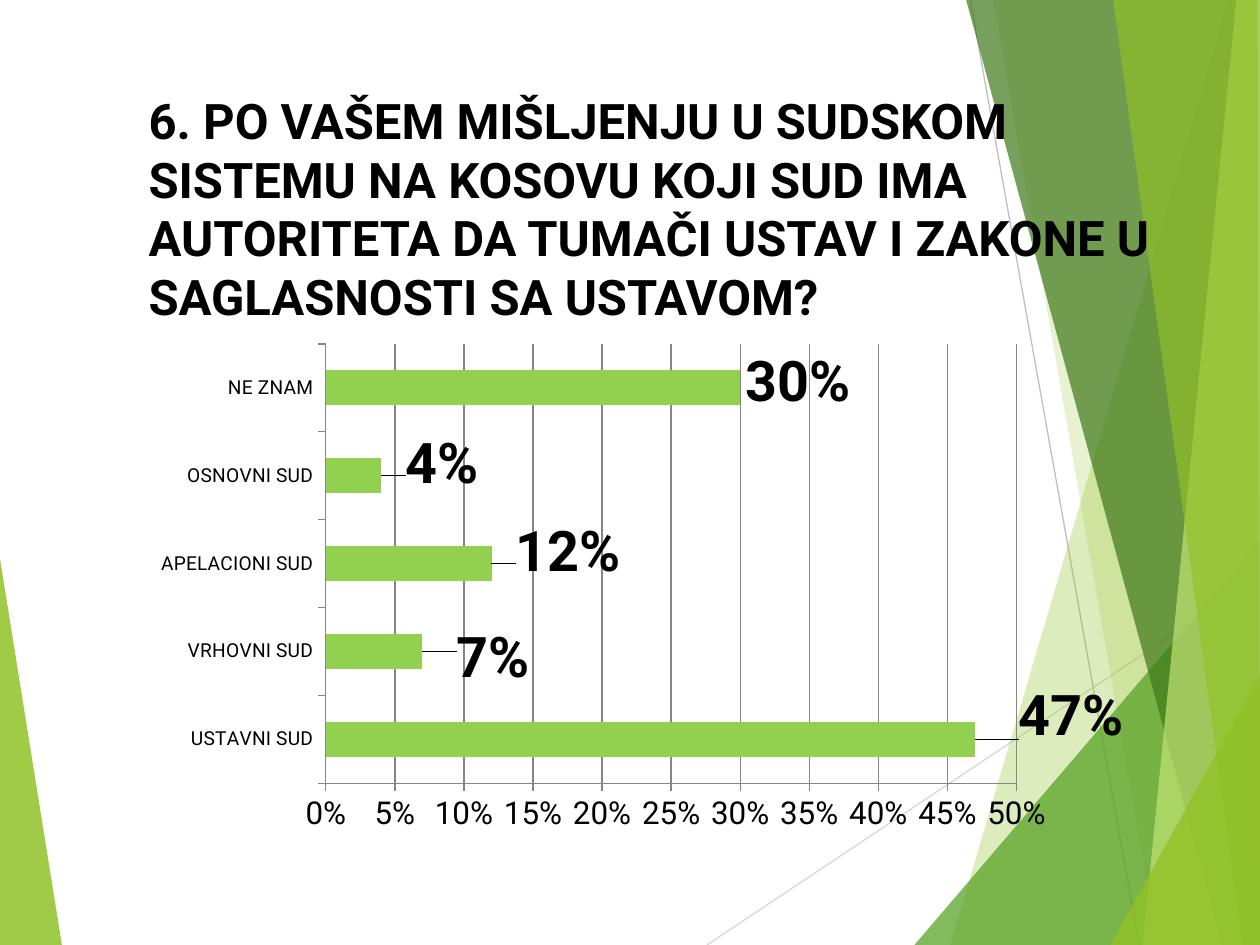
from dataclasses import dataclass

import lxml.etree
import pptx
import pptx.chart.data
import pptx.dml.color
import pptx.enum.chart
import pptx.enum.shapes
import pptx.enum.text
import pptx.oxml
import pptx.oxml.ns
import pptx.util

Pt = pptx.util.Pt
qn = pptx.oxml.ns.qn


@dataclass(frozen=True)
class Theme:
    font: str = "Roboto"
    text: str = "000000"
    lime: str = "90C226"
    green: str = "54A021"
    forest: str = "3F7819"
    pale: str = "C0E474"
    bar: str = "92D050"
    grid: str = "868686"
    title_size: float = 28
    axis_size: float = 18
    category_size: float = 11
    value_size: float = 32
    line_width: float = 0.75


@dataclass(frozen=True)
class Facet:
    corners: tuple[tuple[float, float], ...]
    color: str
    opacity: int


@dataclass(frozen=True)
class Ray:
    start: tuple[float, float]
    end: tuple[float, float]
    color: str


@dataclass(frozen=True)
class Answer:
    court: str
    share: float
    label_dx: float
    label_dy: float


THEME = Theme()

LEFT_FACET = Facet(((-0.5, 316), (35.5, 540.5), (-0.5, 540)), THEME.lime, 85)
RAYS = (
    Ray((404, 540), (720.5, 329), "D9D9D9"),
    Ray((554.5, 0), (651, 540), "BFBFBF"),
)
RIGHT_FACETS = (
    Facet(((702, 0), (543, 540), (721.5, 540.5), (721, 0.5)), THEME.lime, 30),
    Facet(((567.5, -0.5), (661.5, 540), (720.5, 540), (720.5, -0.5)), THEME.lime, 20),
    Facet(((522.5, 540), (720, 309), (720.5, 540)), THEME.green, 72),
    Facet(((552, -0.5), (698.5, 540), (720.5, 540), (720.5, -0.5)), THEME.forest, 70),
    Facet(((706.5, -0.5), (653, 540), (720.5, 540), (720, -0.5)), THEME.pale, 70),
    Facet(((636, -0.5), (710, 540), (720, 540), (718.5, -0.5)), THEME.lime, 65),
    Facet(((634.5, 540), (720.5, 385), (720.5, 540)), THEME.lime, 80),
)
QUESTION = (
    "6. PO VAŠEM MIŠLJENJU U SUDSKOM SISTEMU NA KOSOVU KOJI SUD IMA "
    "AUTORITETA DA TUMAČI USTAV I ZAKONE U SAGLASNOSTI SA USTAVOM?"
)
ANSWERS = (
    Answer("USTAVNI SUD", 0.47, 0.04, -0.04),
    Answer("VRHOVNI SUD", 0.07, 0.03, 0.01),
    Answer("APELACIONI SUD", 0.12, 0.02, -0.02),
    Answer("OSNOVNI SUD", 0.04, 0.02, -0.02),
    Answer("NE ZNAM", 0.3, 0, -0.01),
)


def rgb(color: str) -> pptx.dml.color.RGBColor:
    return pptx.dml.color.RGBColor.from_string(color)


def style_font(font, size: float, bold: bool = False) -> None:
    font.name = THEME.font
    font.size = Pt(size)
    font.bold = bold
    font.color.rgb = rgb(THEME.text)


def style_line(line, color: str) -> None:
    line.color.rgb = rgb(color)
    line.width = Pt(THEME.line_width)


def draw_facet(slide, facet: Facet) -> None:
    first, *others = [(Pt(x), Pt(y)) for x, y in facet.corners]
    builder = slide.shapes.build_freeform(*first)
    builder.add_line_segments(others, close=True)
    shape = builder.convert_to_shape()
    shape.shadow.inherit = False
    shape.fill.solid()
    shape.fill.fore_color.rgb = rgb(facet.color)
    shape.line.fill.background()
    color = shape.element.spPr.find(qn("a:solidFill")).find(qn("a:srgbClr"))
    lxml.etree.SubElement(color, qn("a:alpha"), val=str(facet.opacity * 1000))


def draw_ray(slide, ray: Ray) -> None:
    connector = slide.shapes.add_connector(
        pptx.enum.shapes.MSO_CONNECTOR.STRAIGHT,
        *(Pt(value) for value in ray.start + ray.end),
    )
    style_line(connector.line, ray.color)
    lxml.etree.SubElement(connector.element.spPr, qn("a:effectLst"))


def write_question(slide) -> None:
    question = slide.shapes.title
    question.left, question.top = Pt(77.75), Pt(48)
    question.width, question.height = Pt(612), Pt(143.5)
    frame = question.text_frame
    frame.text = QUESTION
    frame.word_wrap = True
    frame.auto_size = pptx.enum.text.MSO_AUTO_SIZE.NONE
    frame.vertical_anchor = pptx.enum.text.MSO_ANCHOR.TOP
    paragraph = frame.paragraphs[0]
    paragraph.alignment = pptx.enum.text.PP_ALIGN.LEFT
    style_font(paragraph.font, THEME.title_size, bold=True)
    question.element.getparent().append(question.element)


def manual_layout(settings: dict[str, str | float]):
    layout = pptx.oxml.parse_xml(
        '<c:layout xmlns:c="http://schemas.openxmlformats.org/drawingml/2006/chart">'
        "<c:manualLayout/></c:layout>"
    )
    for tag, value in settings.items():
        lxml.etree.SubElement(layout[0], qn(f"c:{tag}"), val=str(value))
    return layout


def place_plot(chart) -> None:
    plot_area = chart.plots[0]._element.getparent()
    for old in plot_area.findall(qn("c:layout")):
        plot_area.remove(old)
    plot_area.insert(0, manual_layout({
        "layoutTarget": "inner", "xMode": "edge", "yMode": "edge",
        "x": 0.175, "y": 0.116, "w": 0.718, "h": 0.735,
    }))


def label_answers(series) -> None:
    for index, answer in enumerate(ANSWERS):
        label = series.points[index].data_label
        style_font(label.font, THEME.value_size, bold=True)
        label.position = pptx.enum.chart.XL_LABEL_POSITION.OUTSIDE_END
    labels = series.data_labels
    labels.show_value = True
    labels.number_format = "0%"
    labels.number_format_is_linked = False
    style_font(labels.font, THEME.value_size, bold=True)
    for answer, element in zip(ANSWERS, series._element.iter(qn("c:dLbl"))):
        element.insert(1, manual_layout({"x": answer.label_dx, "y": answer.label_dy}))


def draw_chart(slide) -> None:
    data = pptx.chart.data.CategoryChartData(number_format="0%")
    data.categories = [answer.court for answer in ANSWERS]
    data.add_series("Series 1", [answer.share for answer in ANSWERS])
    chart = slide.shapes.add_chart(
        pptx.enum.chart.XL_CHART_TYPE.BAR_CLUSTERED,
        Pt(90), Pt(157), Pt(552.5), Pt(341.5), data,
    ).chart
    chart.has_legend = False
    chart.has_title = False
    style_font(chart.font, THEME.axis_size)
    place_plot(chart)

    shares, courts = chart.value_axis, chart.category_axis
    for axis, size in ((shares, THEME.axis_size), (courts, THEME.category_size)):
        style_font(axis.tick_labels.font, size)
        style_line(axis.format.line, THEME.grid)
        axis.major_tick_mark = pptx.enum.chart.XL_TICK_MARK.OUTSIDE
    shares.minimum_scale, shares.maximum_scale = 0, 0.5
    shares.major_unit = 0.05
    shares.has_major_gridlines = True
    style_line(shares.major_gridlines.format.line, THEME.grid)
    shares.tick_labels.number_format = "0%"
    shares.tick_labels.number_format_is_linked = False

    plot = chart.plots[0]
    plot.gap_width = 150
    plot.vary_by_categories = False
    series = plot.series[0]
    series.format.fill.solid()
    series.format.fill.fore_color.rgb = rgb(THEME.bar)
    label_answers(series)


def main() -> None:
    deck = pptx.Presentation()
    deck.slide_width, deck.slide_height = Pt(720), Pt(540)
    slide = deck.slides.add_slide(deck.slide_layouts[5])
    draw_facet(slide, LEFT_FACET)
    for ray in RAYS:
        draw_ray(slide, ray)
    for facet in RIGHT_FACETS:
        draw_facet(slide, facet)
    write_question(slide)
    draw_chart(slide)
    deck.save("out.pptx")


if __name__ == "__main__":
    main()
